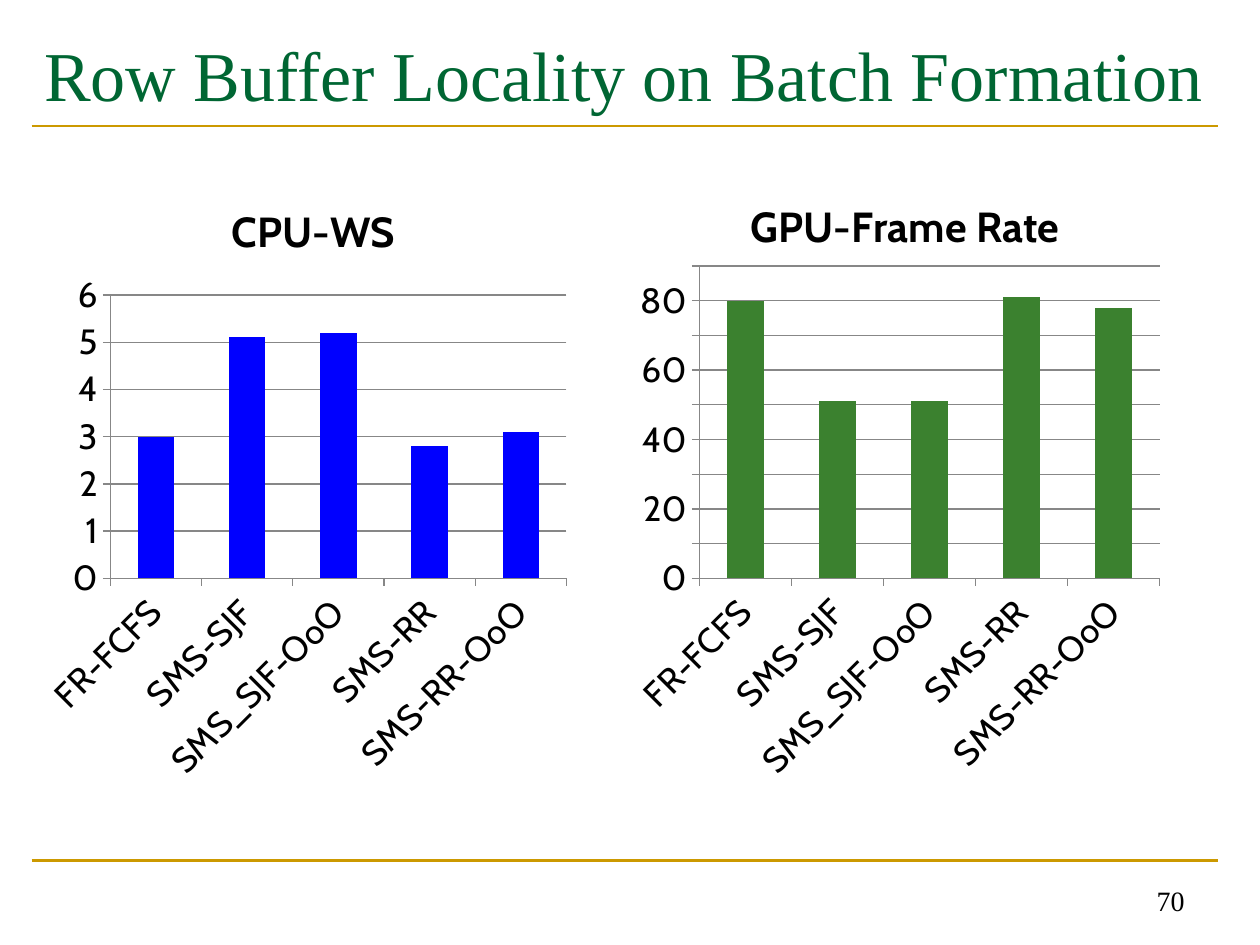
from lxml import etree
from pptx import Presentation
from pptx import util as u
from pptx.chart.data import CategoryChartData
from pptx.dml.color import RGBColor
from pptx.enum import chart as charts, shapes, text
from pptx.oxml import ns

COLORS = {"title": "006633", "rule": "CC9900", "text": "000000",
          "grid": "878787", "cpu": "0000FF", "gpu": "3B812F"}
SERIF, SANS = "Times New Roman", "Cabin"
POLICIES = ["FR-FCFS", "SMS-SJF", "SMS_SJF-OoO", "SMS-RR", "SMS-RR-OoO"]


def rgb(name):
    return RGBColor.from_string(COLORS[name])


def style_font(font, size, face, color="text", bold=False):
    font.size, font.name, font.bold = u.Pt(size), face, bold
    font.color.rgb = rgb(color)


def write_text(shape, content, size, color="text", align=text.PP_ALIGN.LEFT,
               anchor=text.MSO_ANCHOR.MIDDLE):
    frame = shape.text_frame
    frame.word_wrap = True
    frame.vertical_anchor = anchor
    paragraph = frame.paragraphs[0]
    paragraph.alignment = align
    run = paragraph.add_run()
    run.text = content
    style_font(run.font, size, SERIF, color)


def place(shape, left, top, width, height):
    shape.left, shape.top = u.Cm(left), u.Cm(top)
    shape.width, shape.height = u.Cm(width), u.Cm(height)


def add_rule(slide, top):
    line = slide.shapes.add_connector(shapes.MSO_CONNECTOR.STRAIGHT, u.Cm(0.64),
                                      u.Cm(top), u.Cm(24.56), u.Cm(top))
    line.line.color.rgb = rgb("rule")
    line.line.width = u.Pt(1.5)
    etree.SubElement(line._element.spPr, ns.qn("a:effectLst"))


def set_layout(parent, position, **values):
    """Give a chart part a manual layout in fractions of the chart."""
    for old in parent.findall(ns.qn("c:layout")):
        parent.remove(old)
    layout = etree.Element(ns.qn("c:layout"))
    manual = etree.SubElement(layout, ns.qn("c:manualLayout"))
    for name, value in values.items():
        etree.SubElement(manual, ns.qn("c:" + name)).set("val", str(value))
    parent.insert(position, layout)


def style_axis(axis):
    style_font(axis.tick_labels.font, 20, SANS)
    axis.major_tick_mark = charts.XL_TICK_MARK.OUTSIDE
    axis.format.line.color.rgb = rgb("grid")
    axis.format.line.width = u.Pt(0.75)


def add_column_chart(slide, name, values, color, box, plot_box, title_left,
                     maximum, step):
    data = CategoryChartData()
    data.categories = POLICIES
    data.add_series(name, values)
    chart = slide.shapes.add_chart(charts.XL_CHART_TYPE.COLUMN_CLUSTERED,
                                   *map(u.Cm, box), data).chart
    style_font(chart.font, 10, SANS)
    chart.has_legend = False

    # Heading
    chart.has_title = True
    paragraph = chart.chart_title.text_frame.paragraphs[0]
    run = paragraph.add_run()
    run.text = name
    style_font(run.font, 24, SANS, bold=True)
    set_layout(chart.chart_title._element, 1, xMode="edge", yMode="edge",
               x=title_left, y=0.05)

    # Columns
    plot = chart.plots[0]
    plot.gap_width = 150
    plot.vary_by_categories = False
    fill = plot.series[0].format.fill
    fill.solid()
    fill.fore_color.rgb = rgb(color)
    x, y, w, h = plot_box
    set_layout(chart._chartSpace.chart.plotArea, 0, layoutTarget="inner",
               xMode="edge", yMode="edge", x=x, y=y, w=w, h=h)

    # Axes
    style_axis(chart.category_axis)
    label_body = chart.category_axis.tick_labels.font._element.getparent().getparent()
    label_body.getparent().find(ns.qn("a:bodyPr")).set("rot", "-2700000")
    axis = chart.value_axis
    style_axis(axis)
    axis.minimum_scale, axis.maximum_scale, axis.major_unit = 0, maximum, step
    axis.tick_labels.number_format = "General"
    axis.tick_labels.number_format_is_linked = False
    axis.has_major_gridlines = True
    axis.major_gridlines.format.line.color.rgb = rgb("grid")
    axis.major_gridlines.format.line.width = u.Pt(0.75)


def main():
    presentation = Presentation()
    presentation.slide_width, presentation.slide_height = u.Cm(25.4), u.Cm(19.05)
    slide = presentation.slides.add_slide(presentation.slide_layouts[5])

    # Rules and title
    for top in (17.35, 2.54):
        add_rule(slide, top)
    title = slide.shapes.title
    place(title, 0.64, 0.43, 23.92, 2.11)
    title.text_frame.margin_right = 0
    write_text(title, "Row Buffer Locality on Batch Formation", 40, "title")

    # Slide number
    number = slide.shapes.add_textbox(0, 0, 0, 0)
    place(number, 18.21, 17.35, 5.92, 1.27)
    write_text(number, "70", 16, align=text.PP_ALIGN.RIGHT,
               anchor=text.MSO_ANCHOR.BOTTOM)

    # Charts
    add_column_chart(slide, "CPU-WS", [3, 5.1, 5.2, 2.8, 3.1], "cpu",
                     box=(0.69, 3.28, 10.95, 12.7),
                     plot_box=(0.14, 0.21, 0.84, 0.45),
                     title_left=0.35, maximum=6, step=1)
    add_column_chart(slide, "GPU-Frame Rate", [80, 51, 51, 81, 78], "gpu",
                     box=(12.55, 3.18, 11.05, 12.85),
                     plot_box=(0.14, 0.17, 0.84, 0.49),
                     title_left=0.22, maximum=90, step=10)

    presentation.save("out.pptx")


if __name__ == "__main__":
    main()
